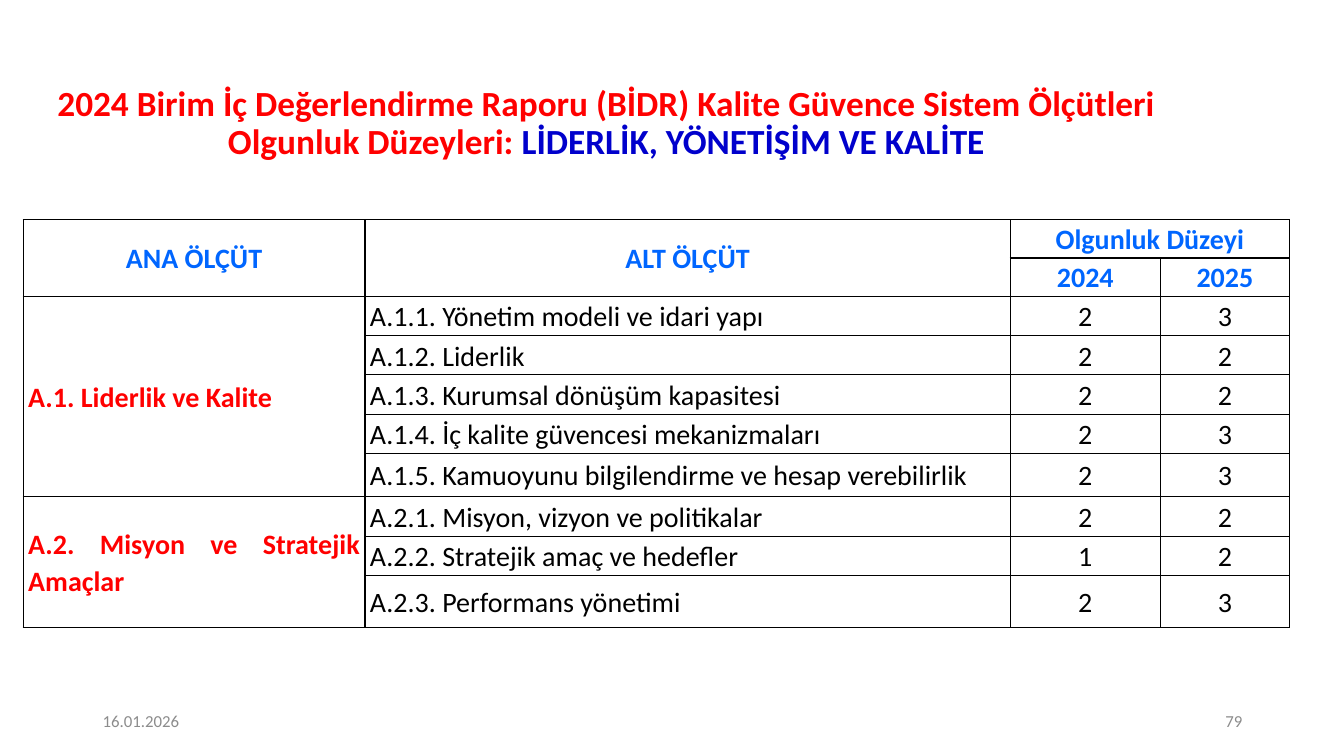
from lxml import etree
from pptx import Presentation
from pptx.dml.color import RGBColor
from pptx.enum.text import MSO_ANCHOR, PP_ALIGN
from pptx.oxml.ns import qn
from pptx.util import Inches, Pt

LEFT, CENTER, RIGHT, JUSTIFY = PP_ALIGN.LEFT, PP_ALIGN.CENTER, PP_ALIGN.RIGHT, PP_ALIGN.JUSTIFY
MIDDLE = MSO_ANCHOR.MIDDLE
RED = RGBColor(0xFF, 0x00, 0x00)
NAVY = RGBColor(0x00, 0x00, 0xCC)
BLUE = RGBColor(0x00, 0x66, 0xFF)
BLACK = RGBColor(0x00, 0x00, 0x00)
WHITE = RGBColor(0xFF, 0xFF, 0xFF)
GRAY = RGBColor(0x8C, 0x8C, 0x8C)
FONT = "Calibri"

COLUMN_WIDTHS = [3.39, 6.4, 1.49, 1.28]
ROW_HEIGHTS = [0.38, 0.38, 0.39, 0.39, 0.39, 0.39, 0.43, 0.39, 0.39, 0.52]
CRITERIA = [
    ("A.1. Liderlik ve Kalite", [
        ("A.1.1. Yönetim modeli ve idari yapı", 2, 3),
        ("A.1.2. Liderlik", 2, 2),
        ("A.1.3. Kurumsal dönüşüm kapasitesi", 2, 2),
        ("A.1.4. İç kalite güvencesi mekanizmaları", 2, 3),
        ("A.1.5. Kamuoyunu bilgilendirme ve hesap verebilirlik", 2, 3),
    ]),
    ("A.2. Misyon ve Stratejik Amaçlar", [
        ("A.2.1. Misyon, vizyon ve politikalar", 2, 2),
        ("A.2.2. Stratejik amaç ve hedefler", 1, 2),
        ("A.2.3. Performans yönetimi", 2, 3),
    ]),
]


def add_span(para, text, size, color, bold=False):
    """Append one formatted run to a paragraph."""
    span = para.add_run()
    span.text = text
    span.font.name = FONT
    span.font.size = Pt(size)
    span.font.bold = bold
    span.font.color.rgb = color


def add_text(page, left, top, width, height, align):
    """Add a wrapped text box and return its first paragraph."""
    box = page.shapes.add_textbox(Inches(left), Inches(top), Inches(width), Inches(height))
    box.text_frame.word_wrap = True
    box.text_frame.vertical_anchor = MIDDLE
    para = box.text_frame.paragraphs[0]
    para.alignment = align
    return para


def add_borders(cell):
    """Draw a thin black line on each side of a cell on a white fill."""
    properties = cell._tc.get_or_add_tcPr()
    for side in ("a:lnL", "a:lnR", "a:lnT", "a:lnB"):
        line = etree.SubElement(properties, qn(side), w=str(Pt(1)))
        fill = etree.SubElement(line, qn("a:solidFill"))
        etree.SubElement(fill, qn("a:srgbClr"), val=str(BLACK))
    cell.fill.solid()
    cell.fill.fore_color.rgb = WHITE


def fill_cell(cell, text, align, color, bold=False):
    """Write the text of one table cell."""
    para = cell.text_frame.paragraphs[0]
    para.alignment = align
    para.line_spacing = 1.07
    add_span(para, text, 20, color, bold)


def add_maturity_table(page):
    """Build the table of criteria and their maturity levels."""
    frame = page.shapes.add_table(
        len(ROW_HEIGHTS), len(COLUMN_WIDTHS), Inches(0.23), Inches(2.18),
        Inches(sum(COLUMN_WIDTHS)), Inches(sum(ROW_HEIGHTS)))
    table = frame.table
    for column, width in zip(table.columns, COLUMN_WIDTHS):
        column.width = Inches(width)
    for row, height in zip(table.rows, ROW_HEIGHTS):
        row.height = Inches(height)
    for cell in table.iter_cells():
        cell.margin_left = cell.margin_right = Inches(0.05)
        cell.margin_top = cell.margin_bottom = 0
        cell.vertical_anchor = MIDDLE
        add_borders(cell)

    table.cell(0, 0).merge(table.cell(1, 0))
    table.cell(0, 1).merge(table.cell(1, 1))
    table.cell(0, 2).merge(table.cell(0, 3))
    headings = [(0, 0, "ANA ÖLÇÜT"), (0, 1, "ALT ÖLÇÜT"), (0, 2, "Olgunluk Düzeyi"),
                (1, 2, "2024"), (1, 3, "2025")]
    for row, column, heading in headings:
        fill_cell(table.cell(row, column), heading, CENTER, BLUE, True)

    row = 2
    for main_criterion, sub_criteria in CRITERIA:
        table.cell(row, 0).merge(table.cell(row + len(sub_criteria) - 1, 0))
        fill_cell(table.cell(row, 0), main_criterion, JUSTIFY, RED, True)
        for name, *levels in sub_criteria:
            fill_cell(table.cell(row, 1), name, JUSTIFY, BLACK)
            for column, level in enumerate(levels, start=2):
                fill_cell(table.cell(row, column), str(level), CENTER, BLACK)
            row += 1


def main():
    """Build and save the slide."""
    deck = Presentation()
    deck.slide_width, deck.slide_height = Inches(13.33), Inches(7.5)
    page = deck.slides.add_slide(deck.slide_layouts[6])

    title = add_text(page, 0.36, 0.85, 11.31, 0.77, CENTER)
    title.line_spacing = 0.9
    add_span(title, "2024 Birim İç Değerlendirme Raporu (BİDR) Kalite Güvence Sistem "
             "Ölçütleri Olgunluk Düzeyleri: ", 25.2, RED, True)
    add_span(title, "LİDERLİK, YÖNETİŞİM VE KALİTE", 25.2, NAVY, True)

    add_maturity_table(page)
    add_span(add_text(page, 0.92, 6.95, 3, 0.4, LEFT), "16.01.2026", 12, GRAY)
    add_span(add_text(page, 9.42, 6.95, 3, 0.4, RIGHT), "79", 12, GRAY)
    deck.save("out.pptx")


if __name__ == "__main__":
    main()
